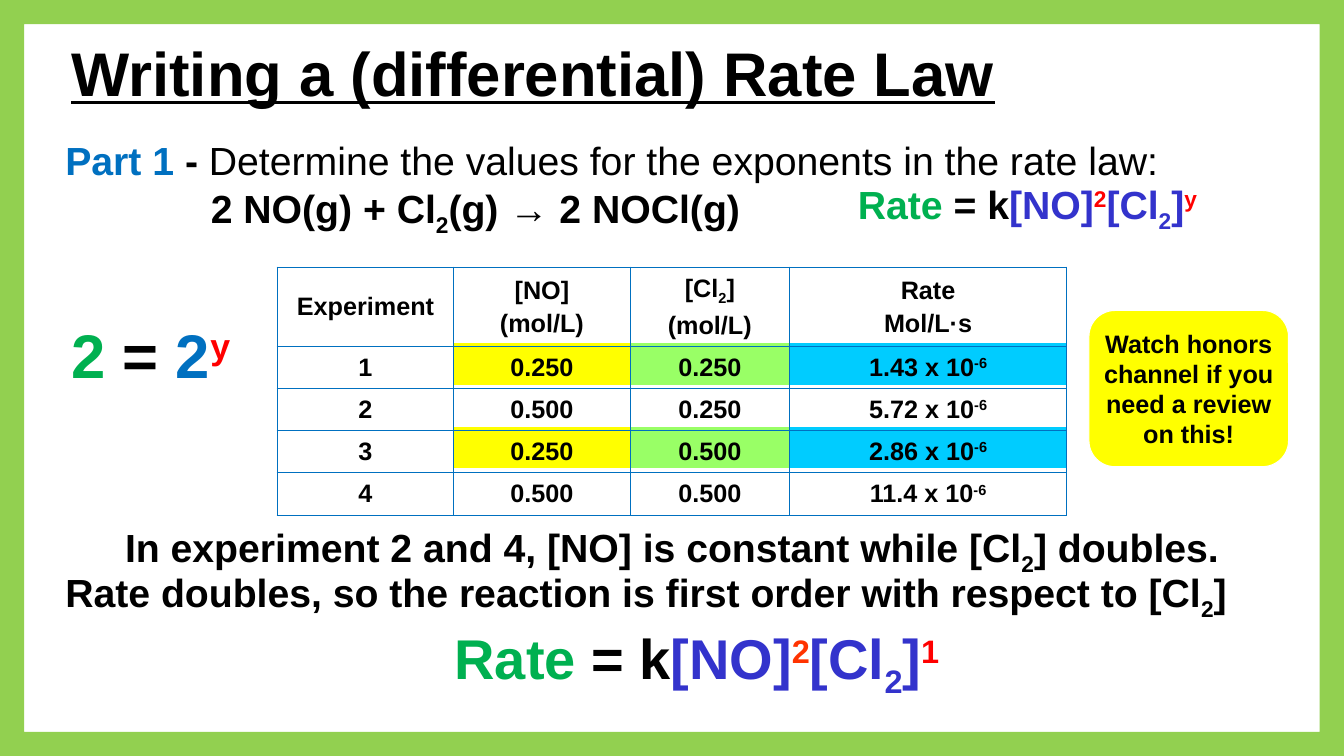
import itertools
import lxml.etree
import pptx
import pptx.dml.color
import pptx.enum.shapes
import pptx.enum.text
import pptx.oxml.ns
import pptx.util
from dataclasses import dataclass

Inches = pptx.util.Inches
Shape = pptx.enum.shapes.MSO_SHAPE
Align = pptx.enum.text.PP_ALIGN
Anchor = pptx.enum.text.MSO_ANCHOR
qn = pptx.oxml.ns.qn


@dataclass(frozen=True)
class Theme:
    font: str = "Arial"
    black: str = "000000"
    white: str = "FFFFFF"
    blue: str = "0070C0"
    green: str = "00B050"
    red: str = "FF0000"
    orange: str = "FF3300"
    violet: str = "3333CC"
    yellow: str = "FFFF00"
    lime: str = "99FF66"
    cyan: str = "00CCFF"
    border: str = "92D050"
    small: int = 18
    body: int = 28
    large: int = 40
    title: int = 44


THEME = Theme()


def rgb(code):
    return pptx.dml.color.RGBColor.from_string(code)


def write(frame, text, size=THEME.body, color=THEME.black, bold=True,
          line=False, align=Align.LEFT, before=0):
    """Text is a string or (text, color, bold) parts; | splits, _ lowers, ^ lifts."""
    parts = [(text,)] if isinstance(text, str) else text
    par = frame.paragraphs[0]
    if par.runs:
        par = frame.add_paragraph()
    par.alignment = align
    par.space_before = pptx.util.Pt(before)
    for part in parts:
        words, tint, heavy = (*part, color, bold)[:3] if len(part) != 2 else (*part, bold)
        for piece in words.split("|"):
            shift = {"_": "-25000", "^": "30000"}.get(piece[0])
            run = par.add_run()
            run.text = piece[1:] if shift else piece
            font = run.font
            font.name, font.size = THEME.font, pptx.util.Pt(size)
            font.bold, font.underline = heavy, line
            font.color.rgb = rgb(tint)
            if shift:
                run._r.get_or_add_rPr().set("baseline", shift)


class Deck:
    def __init__(self, theme):
        self.theme = theme
        self.file = pptx.Presentation()
        self.file.slide_width = Inches(13.33)
        self.file.slide_height = Inches(7.5)
        self.slide = self.file.slides.add_slide(self.file.slide_layouts[6])

    def text(self, box, text, wrap=True, anchor=Anchor.TOP, **style):
        frame = self.slide.shapes.add_textbox(*map(Inches, box)).text_frame
        frame.word_wrap = wrap
        frame.vertical_anchor = anchor
        write(frame, text, **style)

    def shape(self, kind, box, fill, edge=None):
        shape = self.slide.shapes.add_shape(kind, *map(Inches, box))
        shape.shadow.inherit = False
        shape.fill.solid()
        shape.fill.fore_color.rgb = rgb(fill)
        if edge:
            shape.line.color.rgb = rgb(edge)
            shape.line.width = pptx.util.Pt(0.75)
        else:
            shape.line.fill.background()
        return shape

    def table(self, left, top, widths, heights, rows):
        box = (left, top, sum(widths), sum(heights))
        table = self.slide.shapes.add_table(
            len(rows), len(widths), *map(Inches, box)).table
        table.first_row = table.horz_banding = False
        for col, width in zip(table.columns, widths):
            col.width = Inches(width)
        for row, height, texts in zip(table.rows, heights, rows):
            row.height = Inches(height)
            for cell, text in zip(row.cells, texts):
                cell.vertical_anchor = Anchor.MIDDLE
                for part in text.split("\n"):
                    write(cell.text_frame, part, size=self.theme.small,
                          align=Align.CENTER, before=3.6)
                self.edges(cell)
                cell.fill.background()

    def edges(self, cell):
        props = cell._tc.get_or_add_tcPr()
        for side in ("lnL", "lnR", "lnT", "lnB"):
            line = lxml.etree.SubElement(props, qn("a:" + side), w="12700")
            fill = lxml.etree.SubElement(line, qn("a:solidFill"))
            lxml.etree.SubElement(fill, qn("a:srgbClr"), val=self.theme.blue)


def rate(power, tint):
    return [("Rate ", THEME.green), ("= k",), ("[NO]", THEME.violet),
            ("^2", tint), ("[Cl|_2|]", THEME.violet), ("^" + power, THEME.red)]


def main():
    deck = Deck(THEME)
    left, top = 2.75, 2.65
    widths = [1.75, 1.75, 1.58, 2.75]
    starts = list(itertools.accumulate(widths, initial=left))

    # Bands behind trials 1 and 3
    tints = (THEME.yellow, THEME.lime, THEME.cyan)
    for y in (3.4, 4.23):
        for x, width, tint in zip(starts[1:], widths[1:], tints):
            deck.shape(Shape.RECTANGLE, (x, y, width, 0.42), tint, THEME.white)

    # Task and data
    deck.text((0.55, 1.3, 12.23, 4.34), [
        ("Part 1 ", THEME.blue), ("- ",),
        ("Determine the values for the exponents in the rate law:",
         THEME.black, False)])
    deck.table(left, top, widths, [0.75, 0.41, 0.42, 0.42, 0.42], [
        ("Experiment", "[NO]\n(mol/L)", "[Cl|_2|]\n(mol/L)", "Rate\nMol/L·s"),
        ("1", "0.250", "0.250", "1.43 x 10|^-6"),
        ("2", "0.500", "0.250", "5.72 x 10|^-6"),
        ("3", "0.250", "0.500", "2.86 x 10|^-6"),
        ("4", "0.500", "0.500", "11.4 x 10|^-6")])
    deck.text((1.59, 1.78, 6.25, 0.57), "2 NO(g) + Cl|_2|(g) → 2 NOCl(g)",
              align=Align.CENTER)

    # Title and border
    deck.text((0.61, 0.23, 10.56, 0.96), "Writing a (differential) Rate Law",
              anchor=Anchor.MIDDLE, size=THEME.title, line=True)
    border = deck.shape(Shape.FRAME, (0, 0, 13.33, 7.5), THEME.border)
    border.adjustments[0] = 0.032

    # Rate law and result
    deck.text((8.41, 1.74, 3.67, 0.57), rate("y", THEME.red), wrap=False)
    deck.text((0.55, 5.14, 12.23, 0.57),
              "In experiment 2 and 4, [NO] is constant while [Cl|_2|] doubles.",
              align=Align.CENTER)
    deck.text((0.55, 5.59, 12.23, 0.57),
              "Rate doubles, so the reaction is first order with respect to [Cl|_2|]")
    deck.text((4.41, 6.14, 5.15, 0.77), rate("1", THEME.orange), wrap=False,
              size=THEME.large)
    deck.text((0.61, 3.09, 2.07, 0.84), [
        ("2 ", THEME.green), ("= ",), ("2", THEME.blue), ("^y", THEME.red)],
        size=THEME.title)

    # Review note
    note = deck.shape(Shape.ROUNDED_RECTANGLE, (10.8, 3.08, 1.98, 1.55),
                      THEME.yellow, THEME.white)
    frame = note.text_frame
    frame.word_wrap = True
    frame.vertical_anchor = Anchor.MIDDLE
    frame.margin_left = frame.margin_right = 0
    frame.margin_top = frame.margin_bottom = 0
    write(frame, "Watch honors channel if you need a review on this!",
          size=THEME.small, align=Align.CENTER)

    deck.file.save("out.pptx")


if __name__ == "__main__":
    main()
